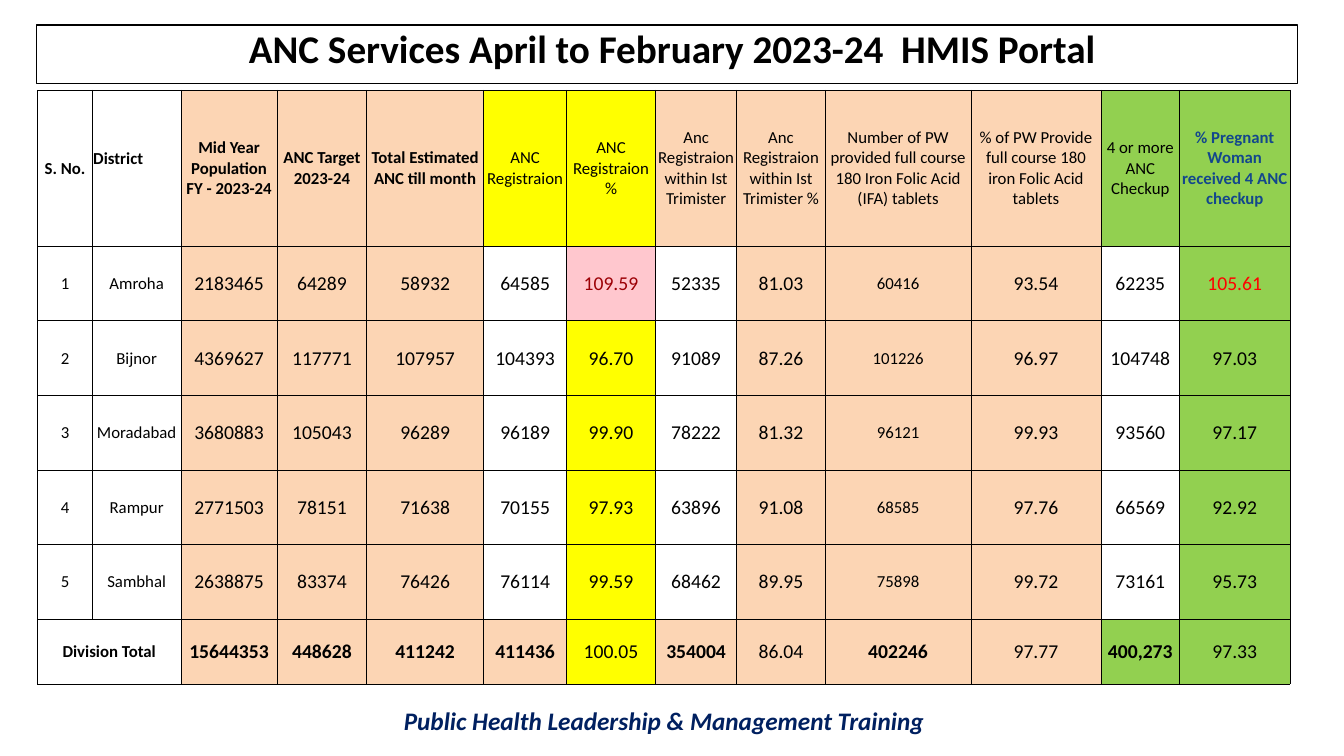
from lxml import etree
from pptx import Presentation
from pptx.dml.color import RGBColor as Rgb
from pptx.enum.shapes import MSO_SHAPE as Shape
from pptx.enum.text import MSO_ANCHOR as Anchor, MSO_AUTO_SIZE as Fit, PP_ALIGN as Align
from pptx.oxml.ns import qn
from pptx.util import Cm, Pt

HUES = {
    "ink": "000000", "navy": "002060", "blue": "13478C", "red": "FF0000",
    "wine": "9C0006", "pink": "FFC7CE", "peach": "FCD5B4",
    "yellow": "FFFF00", "green": "92D050",
}
FILLS = {"p": "peach", "y": "yellow", "g": "green", "k": "pink"}

# Table content: header, five districts, total
HEAD = [
    "S. No.", "District", "Mid Year Population FY - 2023-24",
    "ANC Target 2023-24", "Total Estimated ANC till month",
    "ANC Registraion", "ANC Registraion %",
    "Anc Registraion within Ist Trimister",
    "Anc Registraion within Ist Trimister %",
    "Number of PW provided full course 180 Iron Folic Acid (IFA) tablets",
    "% of PW Provide full course 180 iron Folic Acid tablets",
    "4 or more ANC Checkup", "% Pregnant Woman received 4 ANC checkup",
]
BODY = [line.split() for line in (
    "1 Amroha 2183465 64289 58932 64585 109.59 52335 81.03 60416 93.54 62235 105.61",
    "2 Bijnor 4369627 117771 107957 104393 96.70 91089 87.26 101226 96.97 104748 97.03",
    "3 Moradabad 3680883 105043 96289 96189 99.90 78222 81.32 96121 99.93 93560 97.17",
    "4 Rampur 2771503 78151 71638 70155 97.93 63896 91.08 68585 97.76 66569 92.92",
    "5 Sambhal 2638875 83374 76426 76114 99.59 68462 89.95 75898 99.72 73161 95.73",
)]
TOTAL = ["Division Total", "", "15644353", "448628", "411242", "411436", "100.05",
         "354004", "86.04", "402246", "97.77", "400,273", "97.33"]
ROWS = [HEAD, *BODY, TOTAL]
LAST = len(ROWS) - 1

# One letter per column: fill key, or a dot for none
TINTS = ["..pppyyppppgg"] + ["..ppp.y.ppp.g"] * len(BODY) + ["..ppppyppppgg"]
TINTS[1] = "..ppp.k.ppp.g"
BOLD = {0: {0, 1, 2, 3, 4, 12}, LAST: {0, 2, 3, 4, 5, 7, 9, 11}}
SMALL = {0, 1, 9}
COLOURS = {(0, 12): "blue", (1, 6): "wine", (1, 12): "red"}
WIDTHS = [1.38, 2.23, 2.43, 2.25, 2.95, 2.09, 2.24, 2.05, 2.23, 3.67, 3.28, 1.98, 2.78]
HEIGHTS = [3.93] + [1.88] * len(BODY) + [1.64]


def write(frame, text, size=12, hue="ink", bold=False, italic=False,
          align=Align.CENTER, space=None):
    """Put one formatted paragraph in a text frame."""
    para = frame.paragraphs[0]
    para.alignment = align
    if space:
        para.line_spacing = space
    run = para.add_run()
    run.text = text
    font = run.font
    font.name, font.size, font.bold, font.italic = "Calibri", Pt(size), bold, italic
    font.color.rgb = Rgb.from_string(HUES[hue])


class Deck:
    def __init__(self):
        self.show = Presentation()
        self.show.slide_width, self.show.slide_height = Cm(33.87), Cm(19.05)
        self.slide = self.show.slides.add_slide(self.show.slide_layouts[5])

    def title(self, text, *box):
        head = self.slide.shapes.title
        head.left, head.top, head.width, head.height = map(Cm, box)
        frame = head.text_frame
        frame.auto_size, frame.vertical_anchor = Fit.NONE, Anchor.MIDDLE
        write(frame, text, size=28, bold=True, space=0.9)

    def frame(self, *box):
        rect = self.slide.shapes.add_shape(Shape.RECTANGLE, *map(Cm, box))
        rect.shadow.inherit = False
        rect.fill.background()
        rect.line.color.rgb = Rgb.from_string(HUES["ink"])
        rect.line.width = Pt(1)

    def label(self, text, *box, **style):
        frame = self.slide.shapes.add_textbox(*map(Cm, box)).text_frame
        frame.word_wrap, frame.vertical_anchor = True, Anchor.MIDDLE
        write(frame, text, **style)

    def edge(self, cell):
        """Draw thin lines on all four sides of a cell."""
        props = cell._tc.get_or_add_tcPr()
        for spot, side in enumerate(("a:lnL", "a:lnR", "a:lnT", "a:lnB")):
            line = etree.Element(qn(side), w=str(Pt(0.5)))
            fill = etree.SubElement(line, qn("a:solidFill"))
            etree.SubElement(fill, qn("a:srgbClr"), val=HUES["ink"])
            props.insert(spot, line)

    def cell(self, cell, text, tint, **style):
        cell.vertical_anchor = Anchor.MIDDLE
        cell.margin_left = cell.margin_right = cell.margin_top = Cm(0.02)
        cell.margin_bottom = 0
        if tint in FILLS:
            cell.fill.solid()
            cell.fill.fore_color.rgb = Rgb.from_string(HUES[FILLS[tint]])
        else:
            cell.fill.background()
        self.edge(cell)
        if text:
            write(cell.text_frame, text, **style)

    def table(self, left, top):
        grid = self.slide.shapes.add_table(
            len(ROWS), len(WIDTHS), Cm(left), Cm(top),
            Cm(sum(WIDTHS)), Cm(sum(HEIGHTS))).table
        grid.first_row = grid.horz_banding = False
        for col, width in zip(grid.columns, WIDTHS):
            col.width = Cm(width)
        for row, height in zip(grid.rows, HEIGHTS):
            row.height = Cm(height)
        grid.cell(LAST, 0).merge(grid.cell(LAST, 1))
        for r, row in enumerate(ROWS):
            # The total row is large except for its label
            small = {0} if r == LAST else SMALL
            for c, text in enumerate(row):
                self.cell(grid.cell(r, c), text, TINTS[r][c],
                          size=12 if r == 0 or c in small else 14,
                          bold=c in BOLD.get(r, ()),
                          hue=COLOURS.get((r, c), "ink"),
                          align=Align.LEFT if (r, c) == (0, 1) else Align.CENTER)
        # The district heading sits a little higher than its row
        grid.cell(0, 1).margin_bottom = Cm(0.5)


def main():
    deck = Deck()
    # Heading
    deck.title("ANC Services April to February 2023-24  HMIS Portal", 1.7, 0.43, 30.48, 1.7)
    deck.frame(0.92, 0.63, 31.78, 1.48)
    # District figures
    deck.table(0.95, 2.27)
    # Footer
    deck.label("Public Health Leadership & Management Training", 0.9, 17.58, 31.67, 1.14,
               size=18, hue="navy", bold=True, italic=True)
    deck.show.save("out.pptx")


if __name__ == "__main__":
    main()
